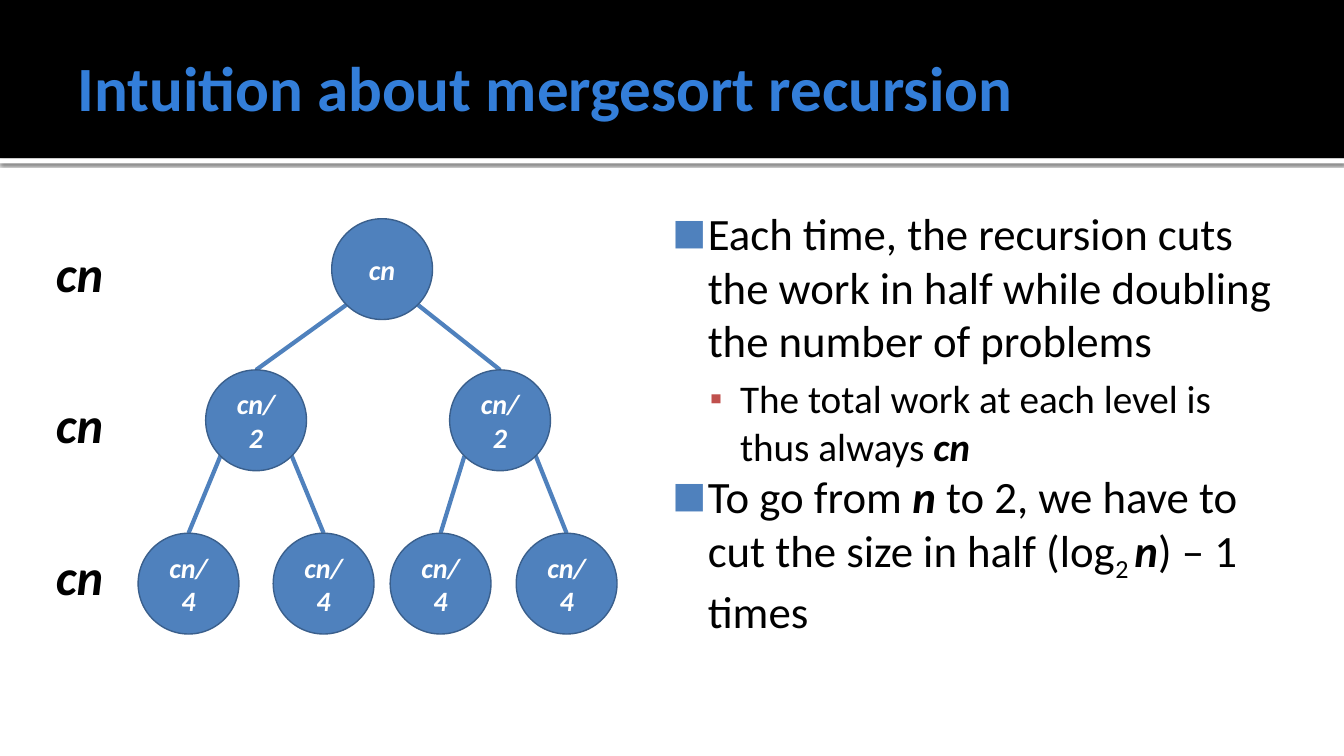
from math import sqrt
from lxml import etree
from pptx import Presentation
from pptx.dml.color import RGBColor
from pptx.enum.shapes import MSO_CONNECTOR, MSO_SHAPE
from pptx.enum.text import MSO_ANCHOR, PP_ALIGN
from pptx.oxml import parse_xml
from pptx.oxml.ns import nsdecls, qn
from pptx.util import Inches, Pt

# Content
TITLE = "Intuition about mergesort recursion"
LEVEL_COSTS = ["cn", "cn", "cn"]
# Tree levels: top edge, then (label, left edge) of each node
TREE = [
    (2.17, [("cn", 3.29)]),
    (3.67, [("cn/2", 2.04), ("cn/2", 4.46)]),
    (5.29, [("cn/4", 1.37), ("cn/4", 2.71), ("cn/4", 3.87), ("cn/4", 5.12)]),
]
# Points: level, runs of (text, style)
POINTS = [
    (0, [("Each time, the recursion cuts the work in half while doubling "
          "the number of problems", "")]),
    (1, [("The total work at each level is thus always ", ""), ("cn", "variable")]),
    (0, [("To go from ", ""), ("n", "variable"),
         (" to 2, we have to cut the size in half (log", ""), ("2 ", "subscript"),
         ("n", "variable"), (") – 1 times", "")]),
]
# Per level: size, indent, hanging, space before, bullet, its colour, its percentage
POINT_STYLES = [(32, 0.48, 0.35, 0, "■", "4F81BD", 80),
                (28, 0.8, 0.3, 5.6, "▪", "C0504D", 90)]

WIDTH, HEIGHT = 13.33, 7.5
BAND = 1.57
NODE = 1
BLUE, BLACK, WHITE = "4F81BD", "000000", "FFFFFF"

deck = Presentation()
deck.slide_width, deck.slide_height = Inches(WIDTH), Inches(HEIGHT)
slide = deck.slides.add_slide(deck.slide_layouts[6])


def color(value):
    return RGBColor.from_string(value)


def add_filled(kind, left, top, width, height, fill, outline=None):
    shape = slide.shapes.add_shape(kind, *map(Inches, (left, top, width, height)))
    shape.shadow.inherit = False
    shape.fill.solid()
    shape.fill.fore_color.rgb = color(fill)
    if outline:
        shape.line.color.rgb = color(outline)
        shape.line.width = Pt(1)
    else:
        shape.line.fill.background()
    return shape


def add_text(left, top, width, height, insets=(0.1, 0.05, 0.1, 0.05)):
    frame = slide.shapes.add_textbox(*map(Inches, (left, top, width, height))).text_frame
    frame.word_wrap = True
    (frame.margin_left, frame.margin_top,
     frame.margin_right, frame.margin_bottom) = map(Inches, insets)
    return frame


def set_font(paragraph, size, value, bold=False, italic=False):
    font = paragraph.font
    font.name, font.size, font.bold, font.italic = "Calibri", Pt(size), bold, italic
    font.color.rgb = color(value)


def paragraph_at(frame, index):
    return frame.add_paragraph() if index else frame.paragraphs[0]


def add_bullet(paragraph, indent, hanging, mark, value, percent):
    properties = paragraph._p.get_or_add_pPr()
    properties.set("marL", str(Inches(indent)))
    properties.set("indent", str(-Inches(hanging)))
    bullet_color = etree.SubElement(properties, qn("a:buClr"))
    etree.SubElement(bullet_color, qn("a:srgbClr"), val=value)
    etree.SubElement(properties, qn("a:buSzPct"), val=str(percent * 1000))
    etree.SubElement(properties, qn("a:buFont"), typeface="Calibri")
    etree.SubElement(properties, qn("a:buChar"), char=mark)


def add_branch(start, end):
    branch = slide.shapes.add_connector(MSO_CONNECTOR.STRAIGHT, *map(Inches, start + end))
    branch.line.color.rgb = color(BLUE)
    branch.line.width = Pt(3)
    etree.SubElement(branch._element.spPr, qn("a:effectLst"))


# Title band with a shadowed white edge
edge = add_filled(MSO_SHAPE.RECTANGLE, 0, BAND, WIDTH, 0.05, WHITE)
edge_properties = edge._element.spPr
edge_properties.remove(edge_properties.find(qn("a:effectLst")))
edge_properties.append(parse_xml(
    f'<a:effectLst {nsdecls("a")}><a:outerShdw blurRad="{Pt(2.5)}" dist="{Pt(0.8)}" '
    f'dir="5400000" algn="tl" rotWithShape="0"><a:srgbClr val="{BLACK}">'
    '<a:alpha val="60000"/></a:srgbClr></a:outerShdw></a:effectLst>'))
add_filled(MSO_SHAPE.RECTANGLE, 0, 0, WIDTH, BAND, BLACK)

title = add_text(0.67, 0.17, 12, 1.37, (0.1, 0.05, 0.05, 0.05))
title.vertical_anchor = MSO_ANCHOR.MIDDLE
title.paragraphs[0].text = TITLE
set_font(title.paragraphs[0], 45, "337ED9", bold=True)

# Branches run from each node's lower diagonals to the tops of its two children
radius = NODE / 2
reach = radius / sqrt(2)
for (parent_top, parents), (child_top, children) in zip(TREE, TREE[1:]):
    for index, (_, child_left) in enumerate(children):
        parent_left = parents[index // 2][1]
        side = 1 if index % 2 else -1
        add_branch((parent_left + radius + side * reach, parent_top + radius + reach),
                   (child_left + radius, child_top))

# Nodes
for top, nodes in TREE:
    for label, left in nodes:
        node = add_filled(MSO_SHAPE.OVAL, left, top, NODE, NODE, BLUE, "3A5F8C")
        node.text_frame.vertical_anchor = MSO_ANCHOR.MIDDLE
        node_label = node.text_frame.paragraphs[0]
        node_label.text = label
        node_label.alignment = PP_ALIGN.CENTER
        set_font(node_label, 20, WHITE, bold=True, italic=True)

# Work per level
costs = add_text(0.29, 2.35, 1, 3.74)
for index, cost in enumerate(LEVEL_COSTS):
    cost_line = paragraph_at(costs, index)
    cost_line.text = cost
    cost_line.alignment = PP_ALIGN.CENTER
    if index:
        cost_line.space_before = Pt(65)
    set_font(cost_line, 36, BLACK, bold=True, italic=True)

# Points
points = add_text(6.48, 1.94, 6.35, 5.06, (0.06, 0.1, 0.1, 0.05))
for index, (level, runs) in enumerate(POINTS):
    size, indent, hanging, before, mark, mark_color, percent = POINT_STYLES[level]
    point = paragraph_at(points, index)
    point.level = level
    if before:
        point.space_before = Pt(before)
    add_bullet(point, indent, hanging, mark, mark_color, percent)
    set_font(point, size, BLACK)
    for text, style in runs:
        run = point.add_run()
        run.text = text
        if style == "variable":
            run.font.bold = run.font.italic = True
        elif style == "subscript":
            run.font._element.set("baseline", "-25000")

deck.save("out.pptx")
